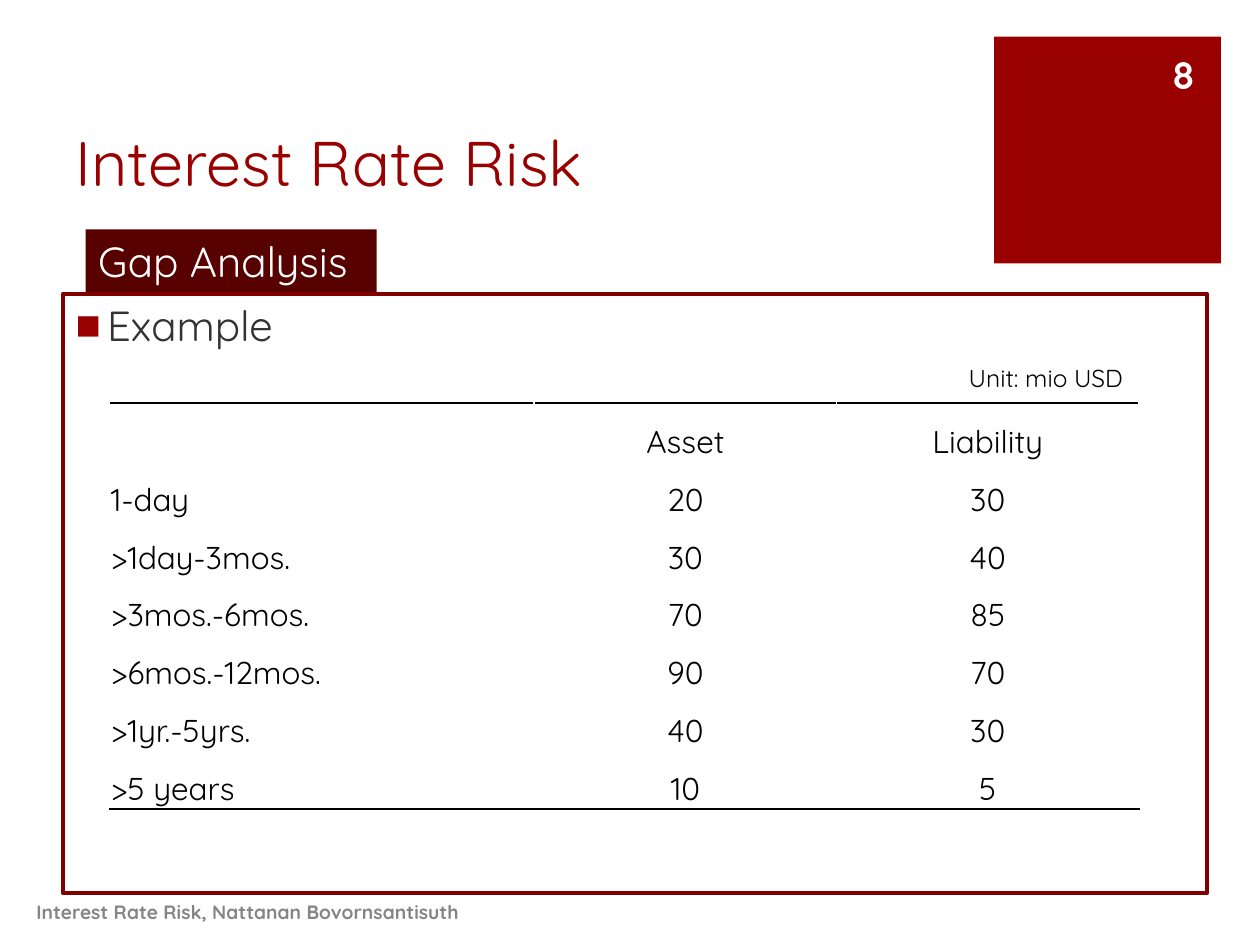
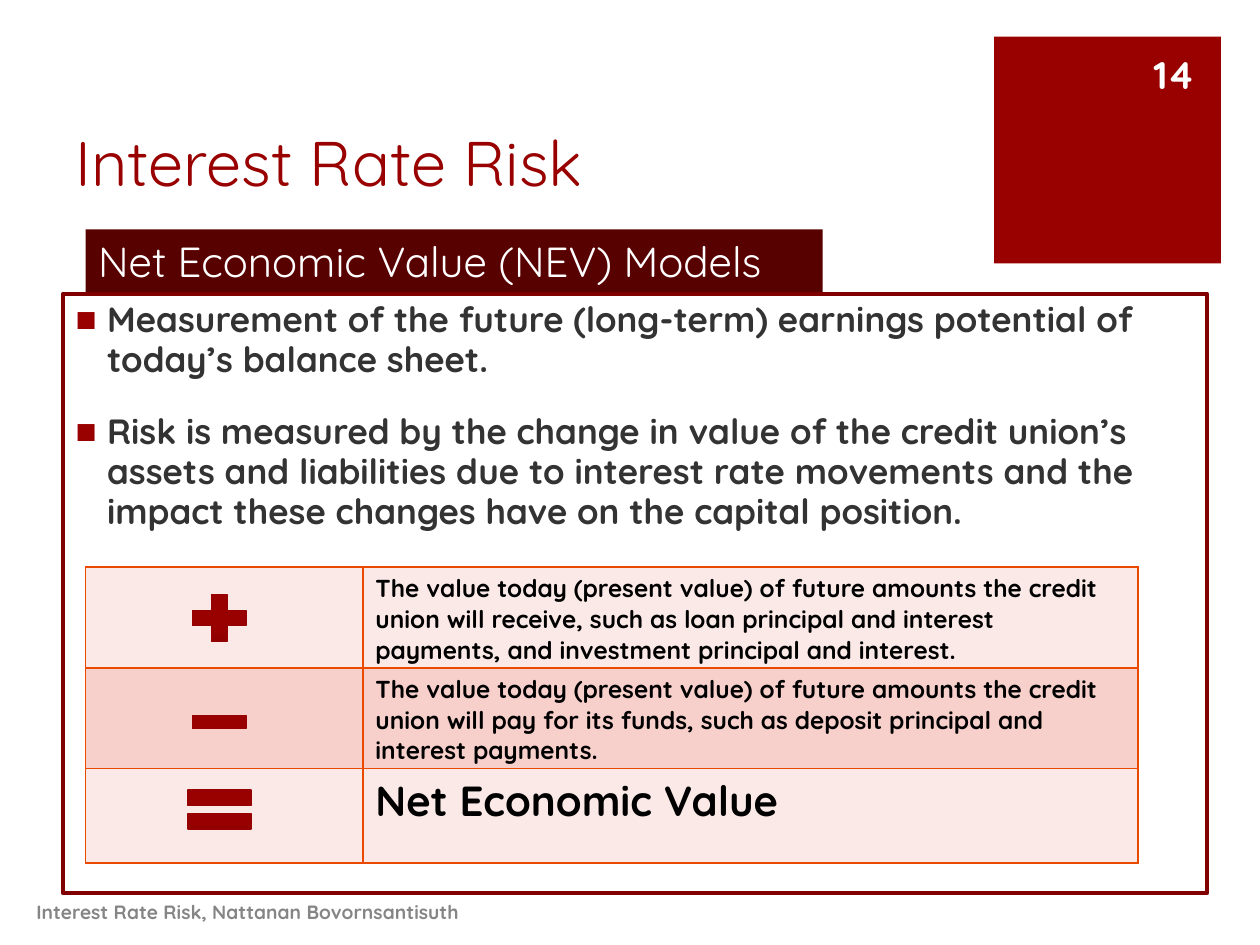
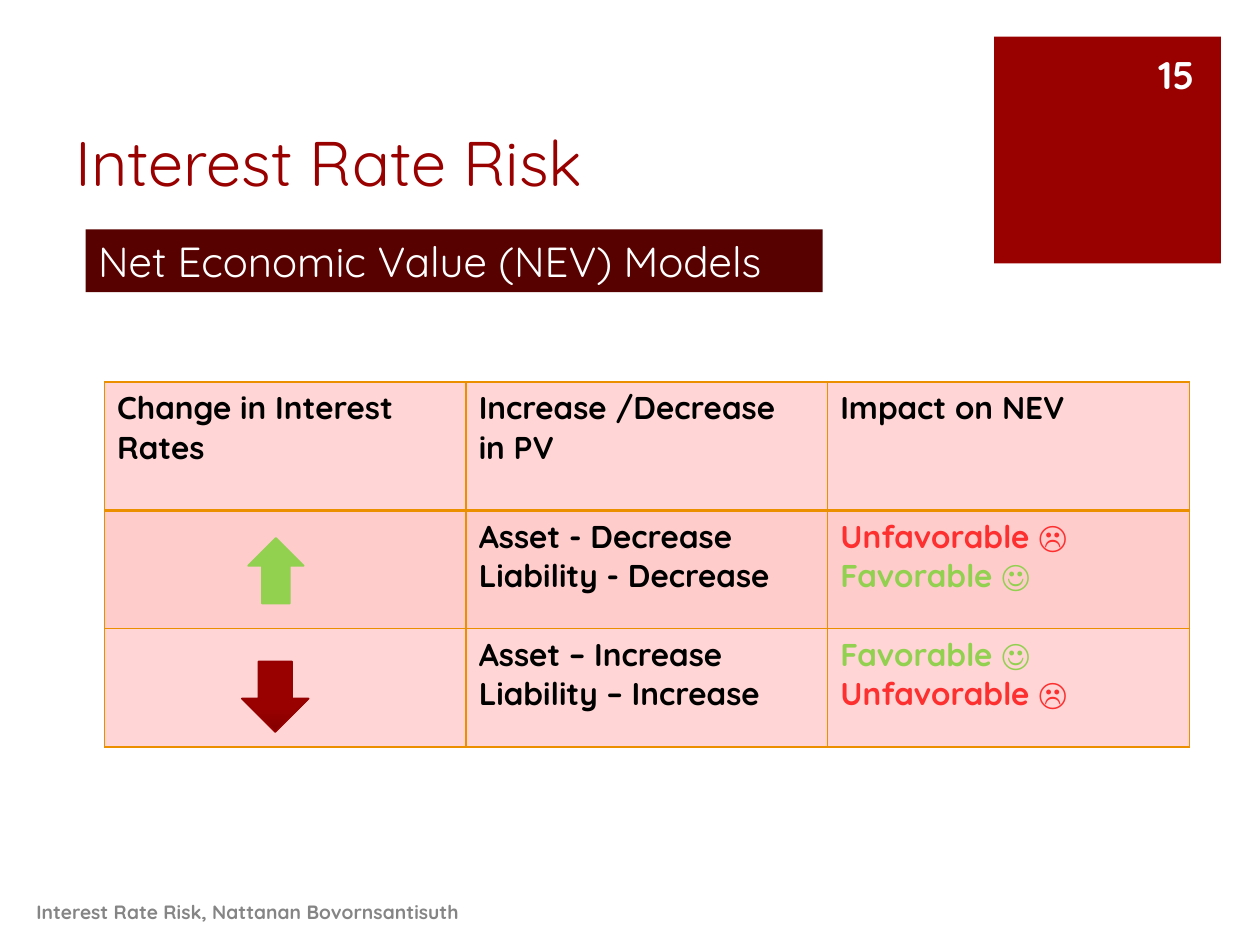
from lxml.etree import SubElement
from pptx import Presentation
from pptx.dml.color import RGBColor
from pptx.enum.shapes import MSO_SHAPE as SHAPE
from pptx.enum.text import MSO_ANCHOR as ANCHOR, PP_ALIGN as ALIGN
from pptx.oxml import parse_xml
from pptx.oxml.ns import nsdecls, qn
from pptx.util import Inches, Pt

FONT = "Quicksand"
COLORS = {
    "red": "990000", "dark_red": "830000", "outline": "960000", "frame": "800000",
    "tab": "580101", "white": "FFFFFF", "black": "000000", "body": "333333",
    "footer": "858585", "orange": "E94A00", "amber": "EB8F00",
    "rose_light": "FBE9E7", "rose": "F7D0CC", "pink_light": "FFD5D5", "pink": "FFCCCC",
    "good": "92D050", "bad": "FD2F2F",
}
TITLE = "Interest Rate Risk"
FOOTER = "Interest Rate Risk, Nattanan Bovornsantisuth"
NEV_TAB = ("Net Economic Value (NEV) Models", 5.85)

GAP_ROWS = [
    ("", "Asset", "Liability"),
    ("1-day", "20", "30"),
    (">1day-3mos.", "30", "40"),
    (">3mos.-6mos.", "70", "85"),
    (">6mos.-12mos.", "90", "70"),
    (">1yr.-5yrs.", "40", "30"),
    (">5 years", "10", "5"),
]
NEV_BULLETS = [
    "Measurement of the future (long-term) earnings potential of today’s balance sheet.",
    "Risk is measured by the change in value of the credit union’s assets and liabilities "
    "due to interest rate movements and the impact these changes have on the capital position.",
]
NEV_ROWS = [
    ("", "The value today (present value) of future amounts the credit union will receive, "
         "such as loan principal and interest payments, and investment principal and interest."),
    ("", "The value today (present value) of future amounts the credit union will pay for its "
         "funds, such as deposit principal and interest payments."),
    ("", "Net Economic Value"),
]
NEV_SIZES = [14, 14, 24]
NEV_SIGNS = [
    (SHAPE.MATH_PLUS, (1.45, 4.65, 0.58, 0.51)),
    (SHAPE.MATH_MINUS, (1.45, 5.51, 0.58, 0.44)),
    (SHAPE.MATH_EQUAL, (1.4, 6.16, 0.68, 0.53)),
]
IMPACT_ROWS = [
    ("Change in Interest Rates", "Increase /Decrease\nin PV", "Impact on NEV"),
    ("", "Asset - Decrease\nLiability - Decrease", "Unfavorable ☹\nFavorable ☺"),
    ("", "Asset – Increase\nLiability – Increase", "Favorable ☺\nUnfavorable ☹"),
]
MOOD_COLORS = {"Unfavorable ☹": "bad", "Favorable ☺": "good"}


def rgb(name):
    return RGBColor.from_string(COLORS[name])


def box(left, top, width, height):
    return [Inches(v) for v in (left, top, width, height)]


def place(sp, *at):
    sp.left, sp.top, sp.width, sp.height = box(*at)


def write(tf, text, size, color, bold=False, align=ALIGN.LEFT):
    tf.text = text
    for p in tf.paragraphs:
        p.alignment = align
        for r in p.runs:
            r.font.name, r.font.size, r.font.bold = FONT, Pt(size), bold
            r.font.color.rgb = rgb(color)


def add_text(s, text, at, size, color, bold=False, align=ALIGN.LEFT, anchor=ANCHOR.MIDDLE):
    tf = s.shapes.add_textbox(*box(*at)).text_frame
    tf.word_wrap = True
    tf.vertical_anchor = anchor
    write(tf, text, size, color, bold, align)


def add_solid(s, kind, at, fill, line=None):
    sp = s.shapes.add_shape(kind, *box(*at))
    sp.shadow.inherit = False
    sp.fill.solid()
    sp.fill.fore_color.rgb = rgb(fill)
    if line:
        sp.line.color.rgb = rgb(line)
        sp.line.width = Pt(1)
    else:
        sp.line.fill.background()
    return sp


def add_shaded(s, kind, at):
    sp = add_solid(s, kind, at, "red", "outline")
    sp.fill.gradient()
    sp.fill.gradient_angle = 90
    for stop, position, color in zip(sp.fill.gradient_stops, (0, 0.35), ("dark_red", "red")):
        stop.position = position
        stop.color.rgb = rgb(color)


def add_slide(prs, layout, number, tab):
    s = prs.slides.add_slide(prs.slide_layouts[layout])
    add_solid(s, SHAPE.RECTANGLE, (7.89, 0.29, 1.8, 1.8), "red")
    title = s.shapes.title
    place(title, 0.5, 0.38, 7.12, 1.25)
    title.text_frame.vertical_anchor = ANCHOR.BOTTOM
    write(title.text_frame, TITLE, 36, "red")
    add_text(s, FOOTER, (0.19, 7.04, 6.57, 0.4), 11, "footer", True)
    add_text(s, number, (9.03, 0.39, 0.55, 0.4), 22, "white", True, ALIGN.RIGHT)
    label, width = tab
    tf = add_solid(s, SHAPE.RECTANGLE, (0.68, 1.82, width, 0.5), "tab").text_frame
    tf.word_wrap = True
    tf.vertical_anchor = ANCHOR.TOP
    write(tf, label, 24, "white")
    return s


def fill_body(s, bullets, size, bold=False, spacing=1.0):
    body = s.placeholders[1]
    place(body, 0.5, 2.33, 9.08, 4.76)
    body.line.color.rgb = rgb("frame")
    body.line.width = Pt(2.25)
    write(body.text_frame, "\n".join(bullets), size, "body", bold)
    for i, p in enumerate(body.text_frame.paragraphs):
        p.space_before = Pt(18 if i else 0)
        p.line_spacing = spacing
        pPr = p._p.get_or_add_pPr()
        pPr.set("marL", str(Inches(0.25)))
        pPr.set("indent", str(Inches(-0.25)))
        color = SubElement(SubElement(pPr, qn("a:buClr")), qn("a:srgbClr"))
        color.set("val", COLORS["red"])
        SubElement(pPr, qn("a:buChar")).set("char", "■")


def set_borders(cell, color, **widths):
    tcPr = cell._tc.get_or_add_tcPr()
    sides = [side for side in "LRTB" if side in widths]
    for i, side in enumerate(sides):
        tcPr.insert(i, parse_xml(
            f'<a:ln{side} {nsdecls("a")} w="{Pt(widths[side])}"><a:solidFill>'
            f'<a:srgbClr val="{COLORS[color]}"/></a:solidFill></a:ln{side}>'))


def add_table(s, rows, left, top, col_widths, row_heights, fills=None):
    at = box(left, top, sum(col_widths), sum(row_heights))
    table = s.shapes.add_table(len(rows), len(col_widths), *at).table
    table.first_row = table.horz_banding = False
    for col, width in zip(table.columns, col_widths):
        col.width = Inches(width)
    for i, height in enumerate(row_heights):
        table.rows[i].height = Inches(height)
        for cell in table.rows[i].cells:
            cell.margin_bottom = Inches(0.01)
            if fills:
                cell.fill.solid()
                cell.fill.fore_color.rgb = rgb(fills[i % len(fills)])
            else:
                cell.fill.background()
    return table


def build_gap(prs):
    s = add_slide(prs, 1, "8", ("Gap Analysis", 2.31))
    fill_body(s, ["Example"], 24)
    table = add_table(s, GAP_ROWS, 0.87, 3.2, [3.37, 2.4, 2.4], [0.46] * len(GAP_ROWS))
    for i, row in enumerate(GAP_ROWS):
        for j, text in enumerate(row):
            cell = table.cell(i, j)
            cell.vertical_anchor = ANCHOR.BOTTOM
            cell.margin_left = cell.margin_right = cell.margin_top = Inches(0.01)
            cell.margin_bottom = 0
            write(cell.text_frame, text, 18, "black", align=ALIGN.CENTER if j else ALIGN.LEFT)
            if i == 0:
                set_borders(cell, "black", T=1)
            elif i == len(GAP_ROWS) - 1:
                set_borders(cell, "black", B=1)
    add_text(s, "Unit: mio USD", (7.59, 2.83, 1.6, 0.34), 14, "black", anchor=ANCHOR.TOP)


def build_nev(prs):
    s = add_slide(prs, 1, "14", NEV_TAB)
    fill_body(s, NEV_BULLETS, 20, True, 0.96)
    table = add_table(s, NEV_ROWS, 0.68, 4.5, [2.2, 6.15], [0.8, 0.8, 0.75],
                      ["rose_light", "rose"])
    for i, (row, size) in enumerate(zip(NEV_ROWS, NEV_SIZES)):
        for j, text in enumerate(row):
            cell = table.cell(i, j)
            write(cell.text_frame, text, size, "black", True)
            set_borders(cell, "orange", L=1, R=1, T=1, B=1)
    for kind, at in NEV_SIGNS:
        add_shaded(s, kind, at)


def build_impact(prs):
    s = add_slide(prs, 5, "15", NEV_TAB)
    table = add_table(s, IMPACT_ROWS, 0.83, 3.03, [2.87] * 3, [1.02, 0.94, 0.94],
                      ["pink_light", "pink"])
    for i, row in enumerate(IMPACT_ROWS):
        for j, text in enumerate(row):
            cell = table.cell(i, j)
            write(cell.text_frame, text, 18, "black", True)
            for p in cell.text_frame.paragraphs:
                for r in p.runs:
                    r.font.color.rgb = rgb(MOOD_COLORS.get(r.text, "black"))
            set_borders(cell, "amber", L=1, R=1, T=2 if i == 1 else 1, B=1 if i else 2)
    add_solid(s, SHAPE.UP_ARROW, (1.97, 4.27, 0.44, 0.52), "good", "good")
    add_shaded(s, SHAPE.DOWN_ARROW, (1.92, 5.25, 0.53, 0.56))


def main():
    prs = Presentation()
    prs.slide_width, prs.slide_height = Inches(10), Inches(7.5)
    for build in (build_gap, build_nev, build_impact):
        build(prs)
    prs.save("out.pptx")


if __name__ == "__main__":
    main()
